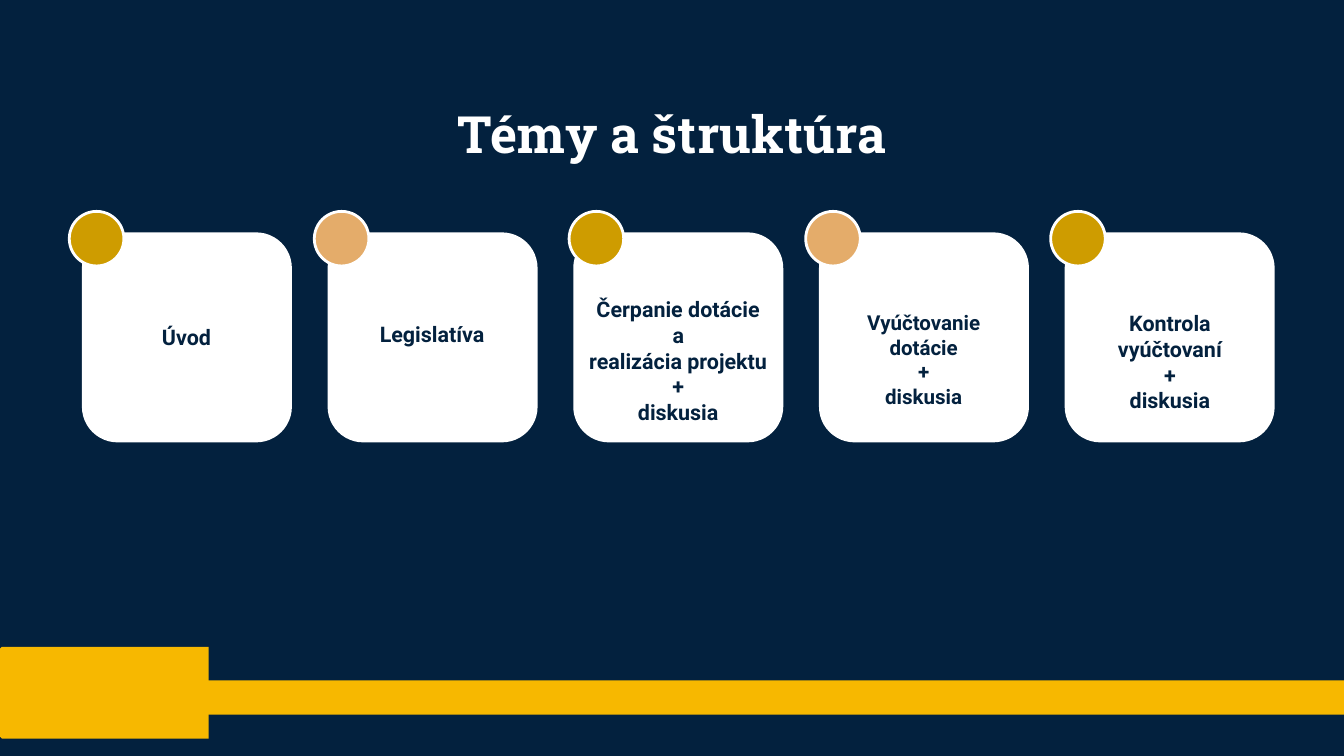
from pptx import Presentation
from pptx import util as u
from pptx.dml.color import RGBColor
from pptx.enum import shapes, text

# Content: lines, text box (left, top, width, height), font size, dot left
TITLE = "Témy a štruktúra"
TOPICS = [
    (["Úvod"], (138, 463, 257, 36), 23, 99),
    (["Legislatíva"], (489, 458, 257, 36), 23, 449),
    (["Čerpanie dotácie", "a", "realizácia projektu", "+", "diskusia"],
     (814, 423, 310, 180), 23, 813),
    (["Vyúčtovanie dotácie", "+", "diskusia"], (1191, 443, 257, 140), 22, 1151),
    (["Kontrola vyúčtovaní", "+", "diskusia"], (1543, 443, 257, 144), 23, 1501),
]
COLORS = {"navy": "03213E", "white": "FFFFFF", "gold": "CE9C00",
          "sand": "E4AC6A", "yellow": "F7B800"}

# Layout in px
PX = 9525
CARD_LEFT, CARD_TOP, CARD_SIZE, CARD_STEP = 117, 332, 300, 351
DOT_TOP, DOT_SIZE = 302, 78


def rgb(name):
    return RGBColor.from_string(COLORS[name])


def px(*values):
    return [u.Emu(v * PX) for v in values]


def add_shape(kind, box, fill, outline=None):
    sp = s.shapes.add_shape(kind, *px(*box))
    sp.shadow.inherit = False
    sp.fill.solid()
    sp.fill.fore_color.rgb = rgb(fill)
    if outline:
        sp.line.color.rgb = rgb(outline)
        sp.line.width = u.Pt(3)
    else:
        sp.line.fill.background()
    return sp


def write(sp, lines, font, size, color, spacing):
    tf = sp.text_frame
    tf.word_wrap = True
    tf.auto_size = text.MSO_AUTO_SIZE.NONE
    tf.vertical_anchor = text.MSO_ANCHOR.TOP
    tf.margin_left = tf.margin_top = tf.margin_right = tf.margin_bottom = 0
    for i, line in enumerate(lines):
        p = tf.add_paragraph() if i else tf.paragraphs[0]
        p.alignment = text.PP_ALIGN.CENTER
        p.line_spacing = u.Pt(size * spacing)
        r = p.add_run()
        r.text = line
        r.font.name = font
        r.font.size = u.Pt(size)
        r.font.bold = True
        r.font.color.rgb = rgb(color)


prs = Presentation()
prs.slide_width, prs.slide_height = px(1920, 1080)
s = prs.slides.add_slide(prs.slide_layouts[5])
s.background.fill.solid()
s.background.fill.fore_color.rgb = rgb("navy")

# Title
title = s.shapes.title
title.left, title.top, title.width, title.height = px(581, 160, 758, 77)
write(title, [TITLE], "Roboto Slab", 55, "white", 1)

# Topic cards with a dot at the corner
for i, (lines, box, size, dot_left) in enumerate(TOPICS):
    card = add_shape(shapes.MSO_SHAPE.ROUNDED_RECTANGLE,
                     (CARD_LEFT + i * CARD_STEP, CARD_TOP, CARD_SIZE, CARD_SIZE),
                     "white")
    card.adjustments[0] = 0.17
    add_shape(shapes.MSO_SHAPE.OVAL, (dot_left, DOT_TOP, DOT_SIZE, DOT_SIZE),
              "sand" if i % 2 else "gold", "white")
    write(s.shapes.add_textbox(*px(*box)), lines, "Roboto", size, "navy", 1.2)

# Footer band, bleeding past the slide edges
add_shape(shapes.MSO_SHAPE.RECTANGLE, (-147, 972, 2119, 49), "yellow")
tab = add_shape(shapes.MSO_SHAPE.PENTAGON, (-63, 924, 361, 131), "yellow")
tab.rotation = 180

prs.save("out.pptx")
